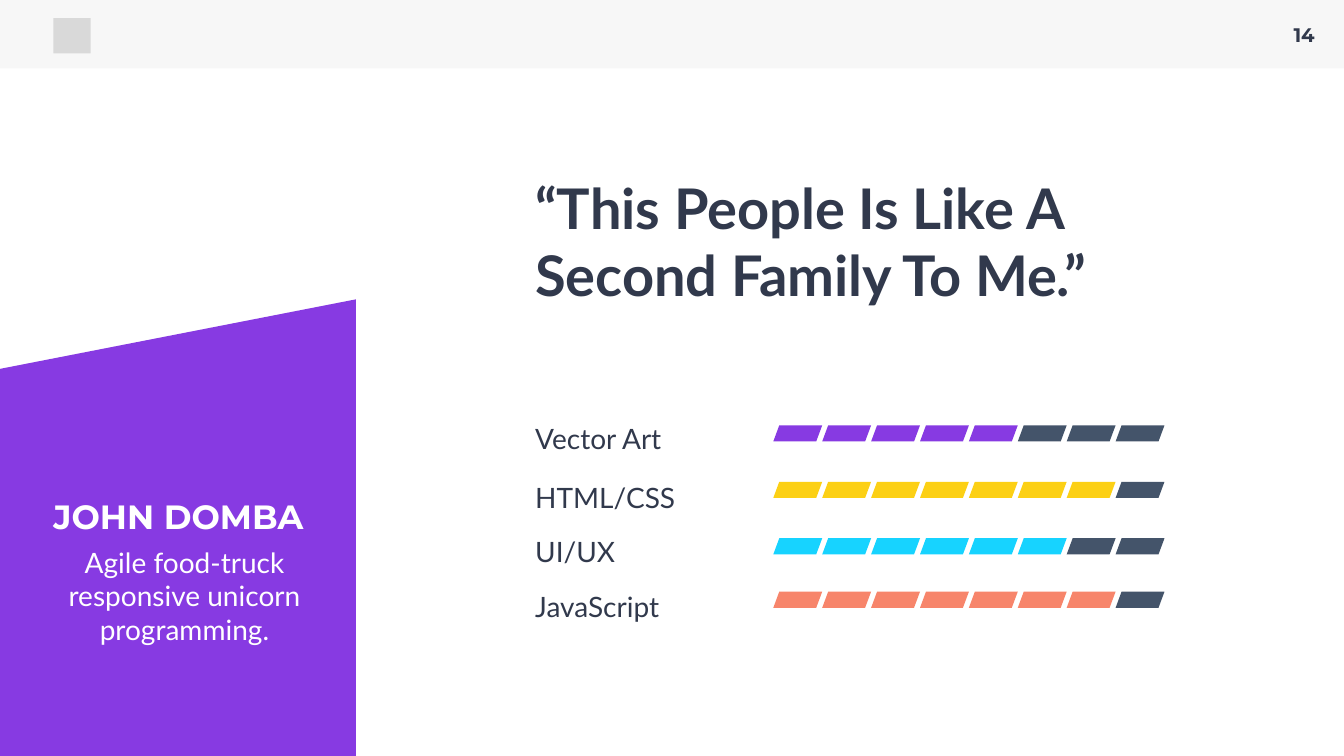
from pptx import Presentation
from pptx.dml.color import RGBColor
from pptx.enum import shapes, text
from pptx.util import Inches, Pt

INK = RGBColor(0x31, 0x39, 0x4C)
WHITE = RGBColor(0xFF, 0xFF, 0xFF)
HEADER_GREY = RGBColor(0xF7, 0xF7, 0xF7)
MARK_GREY = RGBColor(0xD9, 0xD9, 0xD9)
SLATE = RGBColor(0x44, 0x54, 0x6A)
PURPLE = RGBColor(0x87, 0x3A, 0xE2)
YELLOW = RGBColor(0xFC, 0xD0, 0x15)
CYAN = RGBColor(0x17, 0xD3, 0xFF)
CORAL = RGBColor(0xF7, 0x85, 0x6B)

LEFT, CENTER = text.PP_ALIGN.LEFT, text.PP_ALIGN.CENTER


def paint(shape, color):
    shape.fill.solid()
    shape.fill.fore_color.rgb = color
    shape.line.fill.background()
    shape.shadow.inherit = False


def write(box, wording, size, font, color, bold=False, align=LEFT, spacing=1.0):
    """Fill a text box or placeholder with one top-anchored, wrapped paragraph."""
    frame = box.text_frame
    frame.text = wording
    frame.word_wrap = True
    frame.auto_size = text.MSO_AUTO_SIZE.NONE
    frame.vertical_anchor = text.MSO_ANCHOR.TOP
    para = frame.paragraphs[0]
    para.alignment = align
    para.line_spacing = spacing
    span = para.runs[0].font
    span.size, span.name, span.bold = Pt(size), font, bold
    span.color.rgb = color


deck = Presentation()
deck.slide_width, deck.slide_height = Inches(13.33), Inches(7.5)
page = deck.slides.add_slide(deck.slide_layouts[5])

# Header band with a plain mark and the page number
header = page.shapes.add_shape(
    shapes.MSO_SHAPE.RECTANGLE, 0, 0, Inches(13.33), Inches(0.68))
paint(header, HEADER_GREY)
mark = page.shapes.add_shape(
    shapes.MSO_SHAPE.RECTANGLE, Inches(0.53), Inches(0.18), Inches(0.37), Inches(0.35))
paint(mark, MARK_GREY)
number = page.shapes.add_textbox(Inches(12.7), Inches(0.18), Inches(0.47), Inches(0.29))
write(number, "14", 14, "Montserrat", INK, bold=True, align=CENTER)

# Purple panel with the person's name and description
outline = page.shapes.build_freeform(0, Inches(3.66))
outline.add_line_segments(
    [(Inches(x), Inches(y)) for x, y in [(3.53, 2.97), (3.53, 7.5), (0, 7.5)]], close=True)
paint(outline.convert_to_shape(), PURPLE)
name = page.shapes.add_textbox(Inches(0.38), Inches(4.87), Inches(2.78), Inches(0.44))
write(name, "JOHN DOMBA", 24, "Montserrat", WHITE, bold=True, align=CENTER)
about = page.shapes.add_textbox(Inches(0.57), Inches(5.36), Inches(2.52), Inches(1.1))
write(about, "Agile food-truck responsive unicorn programming.", 20, "Lato", WHITE, align=CENTER)

# Quote
quote = page.shapes.title
quote.left, quote.top = Inches(5.21), Inches(1.67)
quote.width, quote.height = Inches(6.95), Inches(1.43)
write(quote, "“This People Is Like A Second Family To Me.”", 40, "Lato", INK, bold=True)

# Skill ratings: label, label top, bar top, filled segments, colour
skills = [
    ("Vector Art", 4.02, 4.22, 5, PURPLE),
    ("HTML/CSS", 4.6, 4.78, 7, YELLOW),
    ("UI/UX", 5.14, 5.34, 6, CYAN),
    ("JavaScript", 5.68, 5.87, 7, CORAL),
]
SEGMENTS = 8
BAR_LEFT, BAR_RIGHT = 7.67, 11.55
pitch = (BAR_RIGHT - BAR_LEFT) / SEGMENTS
for skill, label_top, bar_top, score, color in skills:
    label = page.shapes.add_textbox(
        Inches(5.21), Inches(label_top), Inches(2.51), Inches(0.43))
    write(label, skill, 20, "Lato", INK, spacing=1.5)
    label.text_frame.margin_top = 0
    for index in range(SEGMENTS):
        segment = page.shapes.add_shape(
            shapes.MSO_SHAPE.PARALLELOGRAM, Inches(BAR_LEFT + index * pitch),
            Inches(bar_top), Inches(pitch), Inches(0.16))
        segment.adjustments[0] = 0.37
        paint(segment, color if index < score else SLATE)

deck.save("out.pptx")
